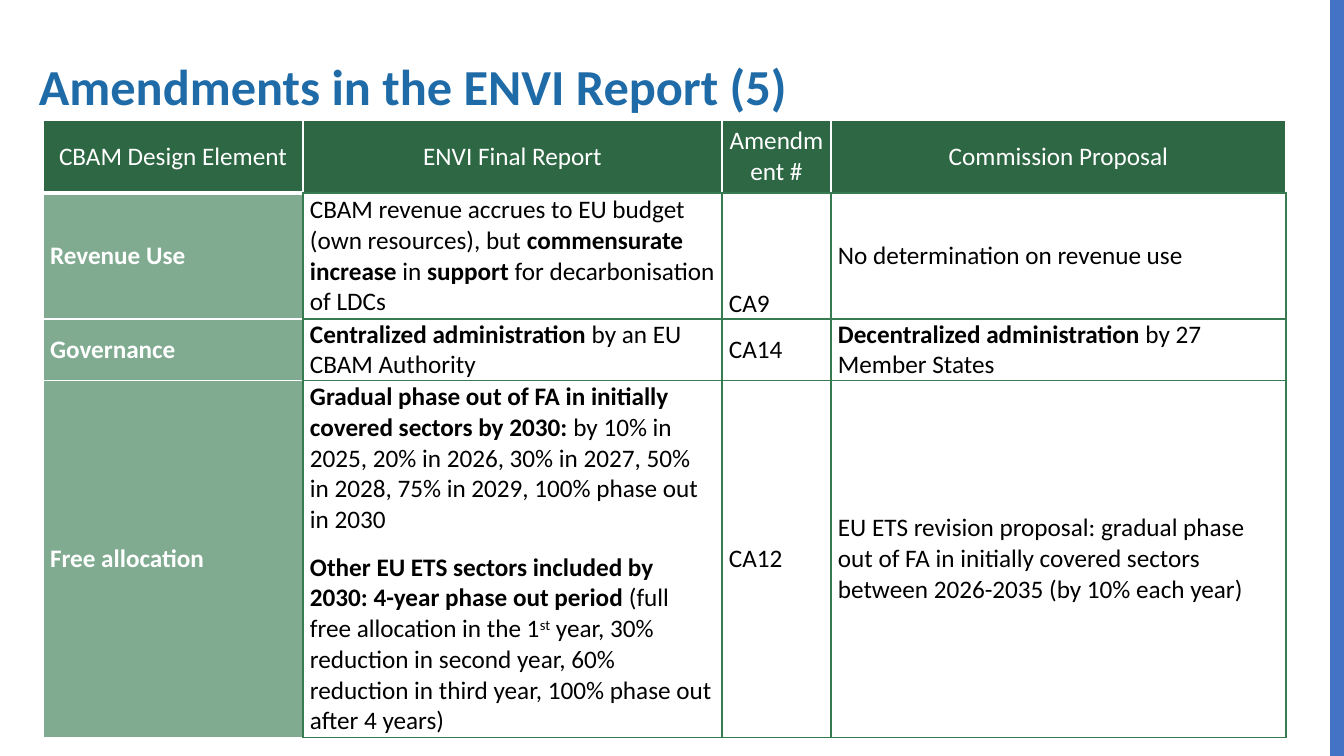
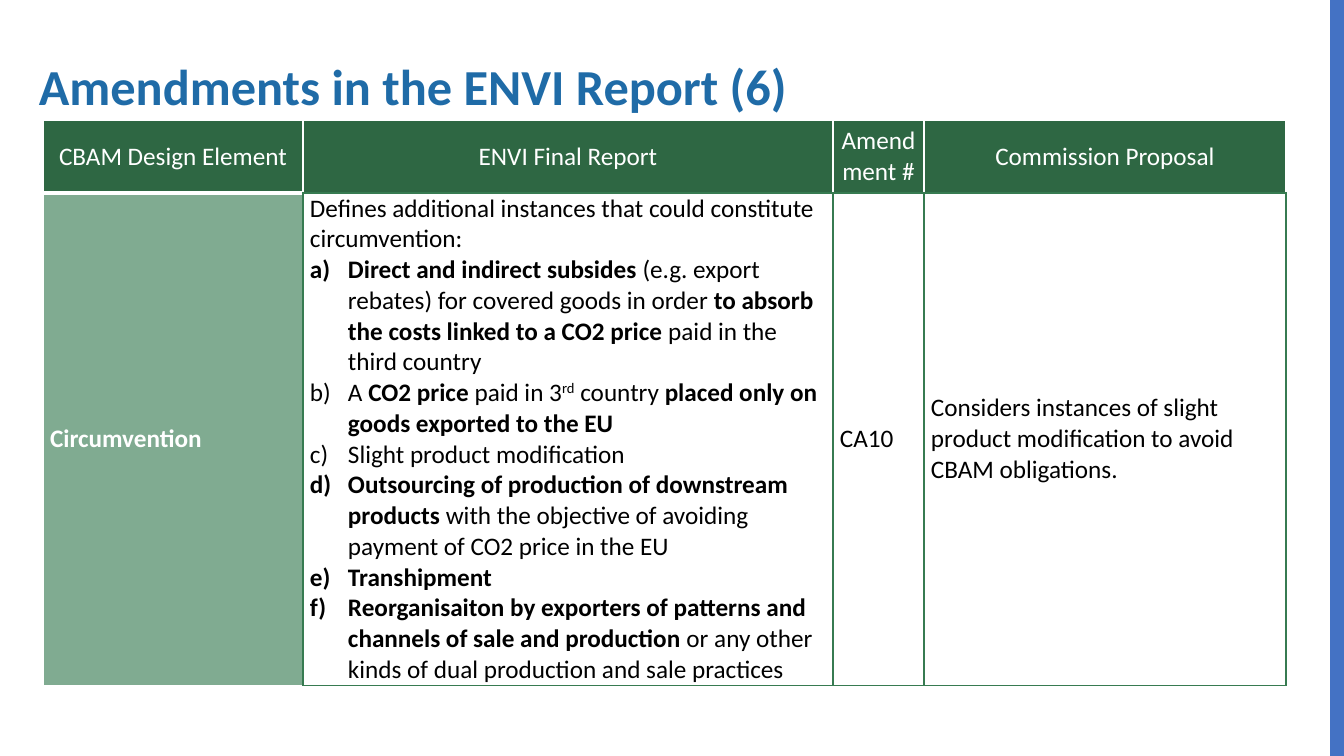
import pptx
import pptx.dml.color
import pptx.enum.shapes
import pptx.enum.text
import pptx.oxml.ns
import pptx.util
from dataclasses import dataclass
from lxml import etree

EMU_PER_PX = 914400 / 100.8
SLIDE_WIDTH, SLIDE_HEIGHT = 1344, 756
ALIGN = pptx.enum.text.PP_ALIGN
ANCHOR = pptx.enum.text.MSO_ANCHOR


@dataclass(frozen=True)
class Theme:
    font: str = "Calibri"
    title: str = "1F6BA7"
    edge: str = "4472C4"
    header: str = "2E6743"
    green: str = "377B51"
    white: str = "FFFFFF"
    text: str = "000000"
    title_size: int = 36
    body_size: int = 18
    label_opacity: int = 63
    edge_width: int = 12
    paragraph_gap: int = 12


@dataclass(frozen=True)
class Cell:
    """Text where **bold** and ^superscript^ are marked; items form a lettered list."""
    paragraphs: tuple
    items: tuple = ()
    anchor: ANCHOR = ANCHOR.MIDDLE


def px(length):
    return pptx.util.Emu(round(length * EMU_PER_PX))


def rgb(color):
    return pptx.dml.color.RGBColor.from_string(color)


def add_xml(parent, tag, **attributes):
    return etree.SubElement(parent, pptx.oxml.ns.qn(tag), attributes)


class Deck:
    def __init__(self, theme):
        self.theme = theme
        self.presentation = pptx.Presentation()
        self.presentation.slide_width = px(SLIDE_WIDTH)
        self.presentation.slide_height = px(SLIDE_HEIGHT)
        self.slide = None

    def new_slide(self):
        self.slide = self.presentation.slides.add_slide(self.presentation.slide_layouts[6])
        self.edge_line()

    def edge_line(self):
        line = self.slide.shapes.add_connector(
            pptx.enum.shapes.MSO_CONNECTOR.STRAIGHT,
            px(1338), px(0), px(1338), px(SLIDE_HEIGHT))
        line.line.color.rgb = rgb(self.theme.edge)
        line.line.width = pptx.util.Pt(self.theme.edge_width)
        add_xml(line._element.spPr, "a:effectLst")

    def add_runs(self, paragraph, marked_text, color, size, bold=False):
        """Add marked text as runs: ** switches bold, ^ switches superscript."""
        for bold_index, part in enumerate(marked_text.split("**")):
            for raised_index, text in enumerate(part.split("^")):
                if not text:
                    continue
                run = paragraph.add_run()
                run.text = text
                run.font.name = self.theme.font
                run.font.size = pptx.util.Pt(size)
                run.font.color.rgb = rgb(color)
                run.font.bold = bold or bold_index % 2 == 1
                if raised_index % 2:
                    run.font._element.set("baseline", "30000")

    def title(self, text):
        box = self.slide.shapes.add_textbox(px(29), px(46), px(1206), px(73))
        box.text_frame.word_wrap = True
        paragraph = box.text_frame.paragraphs[0]
        paragraph.line_spacing = 1.07
        self.add_runs(paragraph, text, self.theme.title, self.theme.title_size, bold=True)

    def borders(self, cell, left, right, top, bottom):
        properties = cell._tc.get_or_add_tcPr()
        sides = {"a:lnL": left, "a:lnR": right, "a:lnT": top, "a:lnB": bottom}
        for tag, (color, width) in sides.items():
            line = add_xml(properties, tag, w=str(pptx.util.Pt(width)))
            add_xml(add_xml(line, "a:solidFill"), "a:srgbClr", val=color)

    def prepare(self, cell, anchor=ANCHOR.MIDDLE):
        cell.margin_left = cell.margin_right = px(7)
        cell.margin_top = cell.margin_bottom = 0
        cell.vertical_anchor = anchor

    def header_cell(self, cell, text, is_first):
        theme = self.theme
        self.prepare(cell)
        white = (theme.white, 1)
        self.borders(cell, white, white, white,
                     (theme.white, 3) if is_first else (theme.green, 1))
        cell.fill.solid()
        cell.fill.fore_color.rgb = rgb(theme.header)
        paragraph = cell.text_frame.paragraphs[0]
        paragraph.alignment = ALIGN.CENTER
        self.add_runs(paragraph, text, theme.white, theme.body_size)

    def label_cell(self, cell, text):
        theme = self.theme
        self.prepare(cell)
        white = (theme.white, 1)
        self.borders(cell, white, (theme.green, 1), white, white)
        cell.fill.solid()
        cell.fill.fore_color.rgb = rgb(theme.green)
        fill_color = cell._tc.tcPr.find(pptx.oxml.ns.qn("a:solidFill"))[0]
        add_xml(fill_color, "a:alpha", val=str(theme.label_opacity * 1000))
        self.add_runs(cell.text_frame.paragraphs[0], text, theme.white, theme.body_size,
                      bold=True)

    def body_cell(self, cell, content):
        theme = self.theme
        self.prepare(cell, content.anchor)
        self.borders(cell, *[(theme.green, 1)] * 4)
        cell.fill.background()
        frame = cell.text_frame
        for index, text in enumerate(content.paragraphs):
            paragraph = frame.add_paragraph() if index else frame.paragraphs[0]
            if index:
                paragraph.space_before = pptx.util.Pt(theme.paragraph_gap)
            self.add_runs(paragraph, text, theme.text, theme.body_size)
        for text in content.items:
            paragraph = frame.add_paragraph()
            properties = paragraph._p.get_or_add_pPr()
            properties.set("marL", str(px(38)))
            properties.set("indent", str(px(-38)))
            add_xml(properties, "a:buAutoNum", type="alphaLcParenR")
            self.add_runs(paragraph, text, theme.text, theme.body_size)

    def table(self, column_widths, row_heights, headers, rows):
        frame = self.slide.shapes.add_table(
            len(row_heights), len(column_widths), px(43), px(120),
            px(sum(column_widths)), px(sum(row_heights)))
        table = frame.table
        table.horz_banding = False
        for column, width in zip(table.columns, column_widths):
            column.width = px(width)
        for row, height in zip(table.rows, row_heights):
            row.height = px(height)
        for index, text in enumerate(headers):
            self.header_cell(table.cell(0, index), text, index == 0)
        for row_index, (label, *contents) in enumerate(rows, start=1):
            self.label_cell(table.cell(row_index, 0), label)
            for column_index, content in enumerate(contents, start=1):
                self.body_cell(table.cell(row_index, column_index), content)


HEADERS = ("CBAM Design Element", "ENVI Final Report", "Amendment #", "Commission Proposal")

REVENUE_TO_ALLOCATION = (
    ("Revenue Use",
     Cell(("CBAM revenue accrues to EU budget (own resources), but **commensurate "
           "increase** in **support** for decarbonisation of LDCs",)),
     Cell(("CA9",), anchor=ANCHOR.BOTTOM),
     Cell(("No determination on revenue use",))),
    ("Governance",
     Cell(("**Centralized administration **by an EU CBAM Authority",)),
     Cell(("CA14",)),
     Cell(("**Decentralized administration **by 27 Member States",))),
    ("Free allocation",
     Cell(("**Gradual phase out of FA in initially covered sectors by 2030: **by 10% in 2025, "
           "20% in 2026, 30% in 2027, 50% in 2028, 75% in 2029, 100% phase out in 2030",
           "**Other EU ETS sectors included by 2030: 4-year phase out period **(full free "
           "allocation in the 1^st^ year, 30% reduction in second year, 60% reduction in "
           "third year, 100% phase out after 4 years)")),
     Cell(("CA12",)),
     Cell(("EU ETS revision proposal: gradual phase out of FA in initially covered sectors "
           "between 2026-2035 (by 10% each year)",))),
)

CIRCUMVENTION = (
    ("Circumvention",
     Cell(("Defines additional instances that could constitute circumvention:",),
          items=(
              "**Direct and indirect subsides **(e.g. export rebates) for covered goods in "
              "order **to absorb the costs linked to a CO2 price **paid in the third country",
              "A **CO2 price **paid in 3^rd^ country **placed only on goods exported to the EU**",
              "Slight product modification",
              "**Outsourcing of production of downstream products **with the objective of "
              "avoiding payment of CO2 price in the EU",
              "**Transhipment**",
              "**Reorganisaiton by exporters of patterns and channels of sale and production "
              "**or any other kinds of dual production and sale practices")),
     Cell(("CA10",)),
     Cell(("Considers instances of slight product modification to avoid CBAM obligations.",))),
)

SLIDES = (
    ("Amendments in the ENVI Report (5)", (260, 419, 109, 455), (73, 126, 61, 357),
     REVENUE_TO_ALLOCATION),
    ("Amendments in the ENVI Report (6)", (260, 530, 91, 362), (73, 492), CIRCUMVENTION),
)


def main():
    deck = Deck(Theme())
    for title, column_widths, row_heights, rows in SLIDES:
        deck.new_slide()
        deck.table(column_widths, row_heights, HEADERS, rows)
        deck.title(title)
    deck.presentation.save("out.pptx")


if __name__ == "__main__":
    main()
